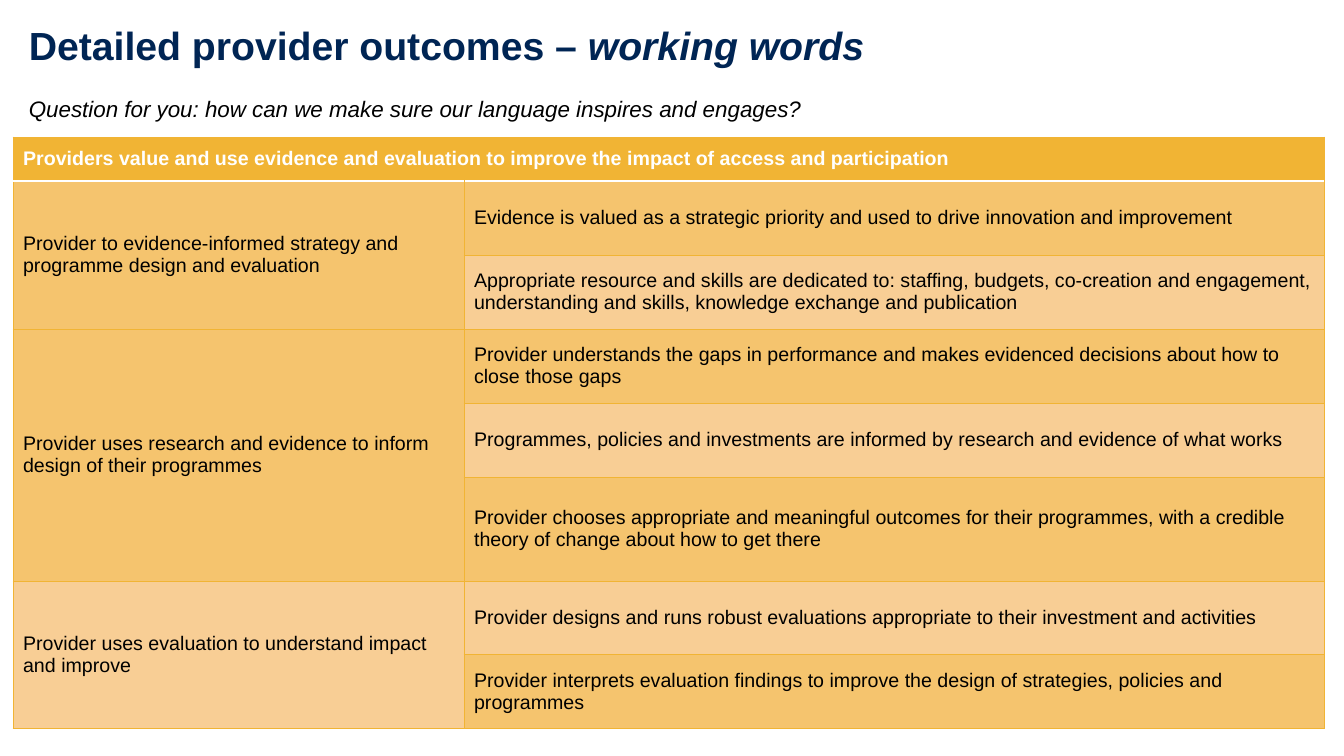
import pptx
import pptx.dml.color
import pptx.enum.text
import pptx.oxml
import pptx.oxml.ns
import pptx.util

EMU_PER_PX = 914400 / 100.8
FONT = "Arial"
NAVY, BLACK, WHITE = "002554", "000000", "FFFFFF"
AMBER, MID_AMBER, PALE_AMBER = "F1B434", "F5C46E", "F8CE95"
MIDDLE = pptx.enum.text.MSO_ANCHOR.MIDDLE
TOP = pptx.enum.text.MSO_ANCHOR.TOP

COLUMN_WIDTHS = [451, 860]
ROW_HEIGHTS = [44, 74, 74, 74, 74, 104, 74, 74]
HEADING = "Providers value and use evidence and evaluation to improve the impact of access and participation"
OUTCOMES = [
    ("Provider to evidence-informed strategy and programme design and evaluation", MID_AMBER, [
        ("Evidence is valued as a strategic priority and used to drive innovation and improvement", MID_AMBER),
        ("Appropriate resource and skills are dedicated to: staffing, budgets, co-creation and engagement, "
         "understanding and skills, knowledge exchange and publication", PALE_AMBER),
    ]),
    ("Provider uses research and evidence to inform design of their programmes", MID_AMBER, [
        ("Provider understands the gaps in performance and makes evidenced decisions about how to "
         "close those gaps", MID_AMBER),
        ("Programmes, policies and investments are informed by research and evidence of what works", PALE_AMBER),
        ("Provider chooses appropriate and meaningful outcomes for their programmes, with a credible "
         "theory of change about how to get there", MID_AMBER),
    ]),
    ("Provider uses evaluation to understand impact and improve", PALE_AMBER, [
        ("Provider designs and runs robust evaluations appropriate to their investment and activities", PALE_AMBER),
        ("Provider interprets evaluation findings to improve the design of strategies, policies and "
         "programmes", MID_AMBER),
    ]),
]


def px(length):
    """Turn pixels into EMU."""
    return pptx.util.Emu(round(length * EMU_PER_PX))


def rgb(colour):
    """Turn a hex string into a colour."""
    return pptx.dml.color.RGBColor.from_string(colour)


def style_font(font, size, colour, bold=False, italic=None):
    """Set the look of a font."""
    font.name = FONT
    font.size = pptx.util.Pt(size)
    font.color.rgb = rgb(colour)
    font.bold = bold
    font.italic = italic


def add_text(slide, box, texts, size, colour, anchor=MIDDLE, bold=False, italic=None):
    """Add a one-paragraph text box, one run per text, and return the paragraph."""
    frame = slide.shapes.add_textbox(*map(px, box)).text_frame
    frame.word_wrap = True
    frame.vertical_anchor = anchor
    paragraph = frame.paragraphs[0]
    for text in texts:
        paragraph.add_run().text = text
    style_font(paragraph.font, size, colour, bold, italic)
    return paragraph


def set_borders(cell, **changes):
    """Draw thin amber borders, except on the sides given as (colour, points)."""
    properties = cell._tc.get_or_add_tcPr()
    for position, side in enumerate("LRTB"):
        colour, points = changes.get(side, (AMBER, 0.5))
        properties.insert(position, pptx.oxml.parse_xml(
            f'<a:ln{side} {pptx.oxml.ns.nsdecls("a")} w="{pptx.util.Pt(points)}">'
            f'<a:solidFill><a:srgbClr val="{colour}"/></a:solidFill></a:ln{side}>'))


def fill_cell(cell, text, fill, colour=BLACK, bold=False):
    """Write and colour a table cell."""
    cell.text = text
    cell.vertical_anchor = MIDDLE
    cell.fill.solid()
    cell.fill.fore_color.rgb = rgb(fill)
    style_font(cell.text_frame.paragraphs[0].font, 14, colour, bold)


def add_outcome_table(slide):
    """Add the table of outcome groups and their details."""
    table = slide.shapes.add_table(
        len(ROW_HEIGHTS), len(COLUMN_WIDTHS), px(13), px(137),
        px(sum(COLUMN_WIDTHS)), px(sum(ROW_HEIGHTS))).table
    for column, width in zip(table.columns, COLUMN_WIDTHS):
        column.width = px(width)
    for row, height in zip(table.rows, ROW_HEIGHTS):
        row.height = px(height)

    fill_cell(table.cell(0, 0), HEADING, AMBER, WHITE, bold=True)
    table.cell(0, 0).merge(table.cell(0, 1))
    first = 1
    for group, group_fill, details in OUTCOMES:
        fill_cell(table.cell(first, 0), group, group_fill)
        table.cell(first, 0).merge(table.cell(first + len(details) - 1, 0))
        for index, (detail, detail_fill) in enumerate(details, first):
            fill_cell(table.cell(index, 1), detail, detail_fill)
        first += len(details)

    header_edges = {0: {"B": (WHITE, 1)}, 1: {"T": (WHITE, 1)}}
    for index, row in enumerate(table.rows):
        for cell in row.cells:
            set_borders(cell, **header_edges.get(index, {}))


def main():
    """Build and save the slide."""
    presentation = pptx.Presentation()
    presentation.slide_width, presentation.slide_height = px(1344), px(756)
    slide = presentation.slides.add_slide(presentation.slide_layouts[6])
    title = add_text(slide, (19, 2, 1305, 91), ["Detailed provider outcomes – ", "working words"],
                     28, NAVY, bold=True)
    title.line_spacing = 0.9
    title.runs[1].font.italic = True
    add_text(slide, (19, 90, 1305, 37),
             ["Question for you: how can we make sure our language inspires and engages?"],
             16, BLACK, anchor=TOP, italic=True)
    add_outcome_table(slide)
    presentation.save("out.pptx")


if __name__ == "__main__":
    main()
